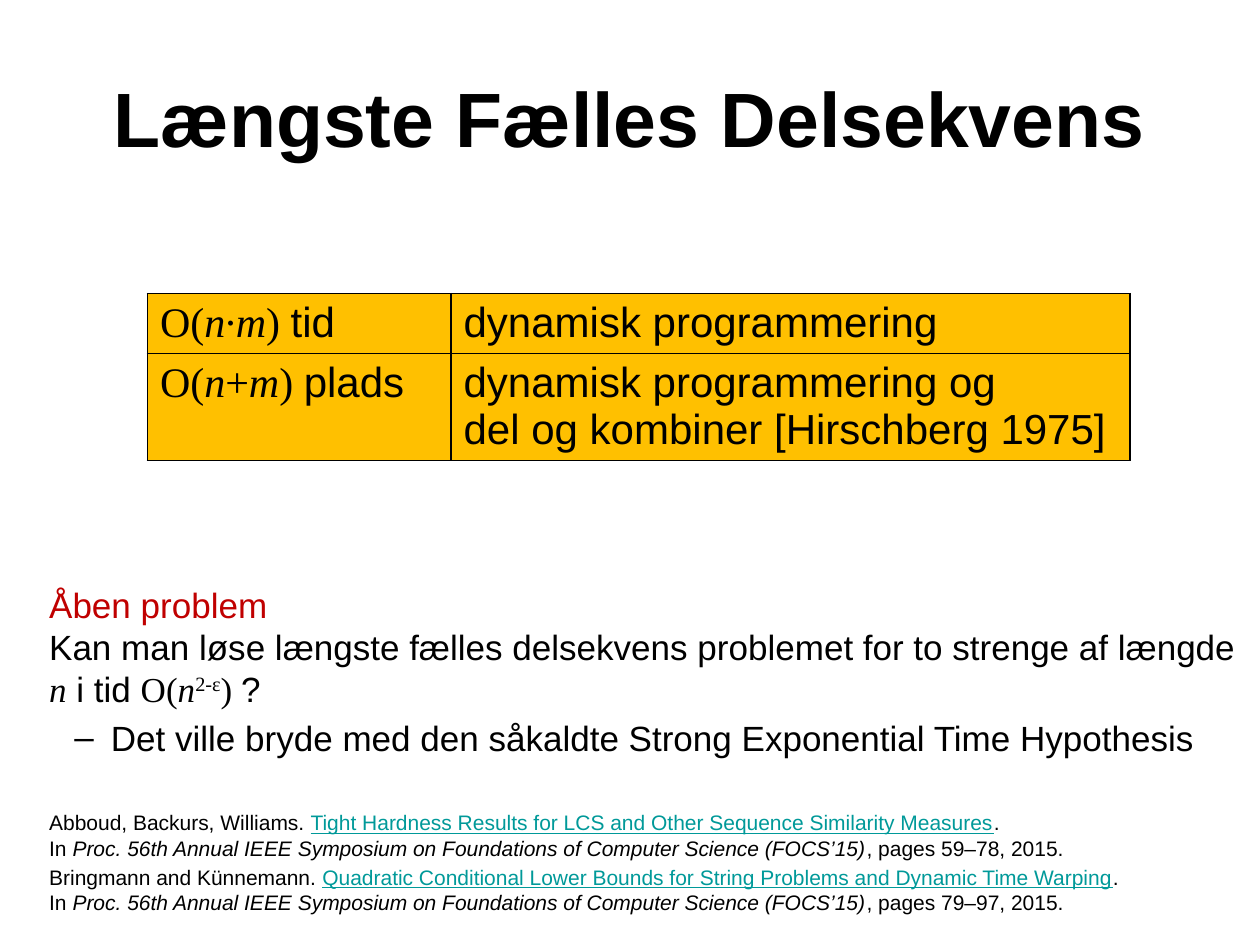
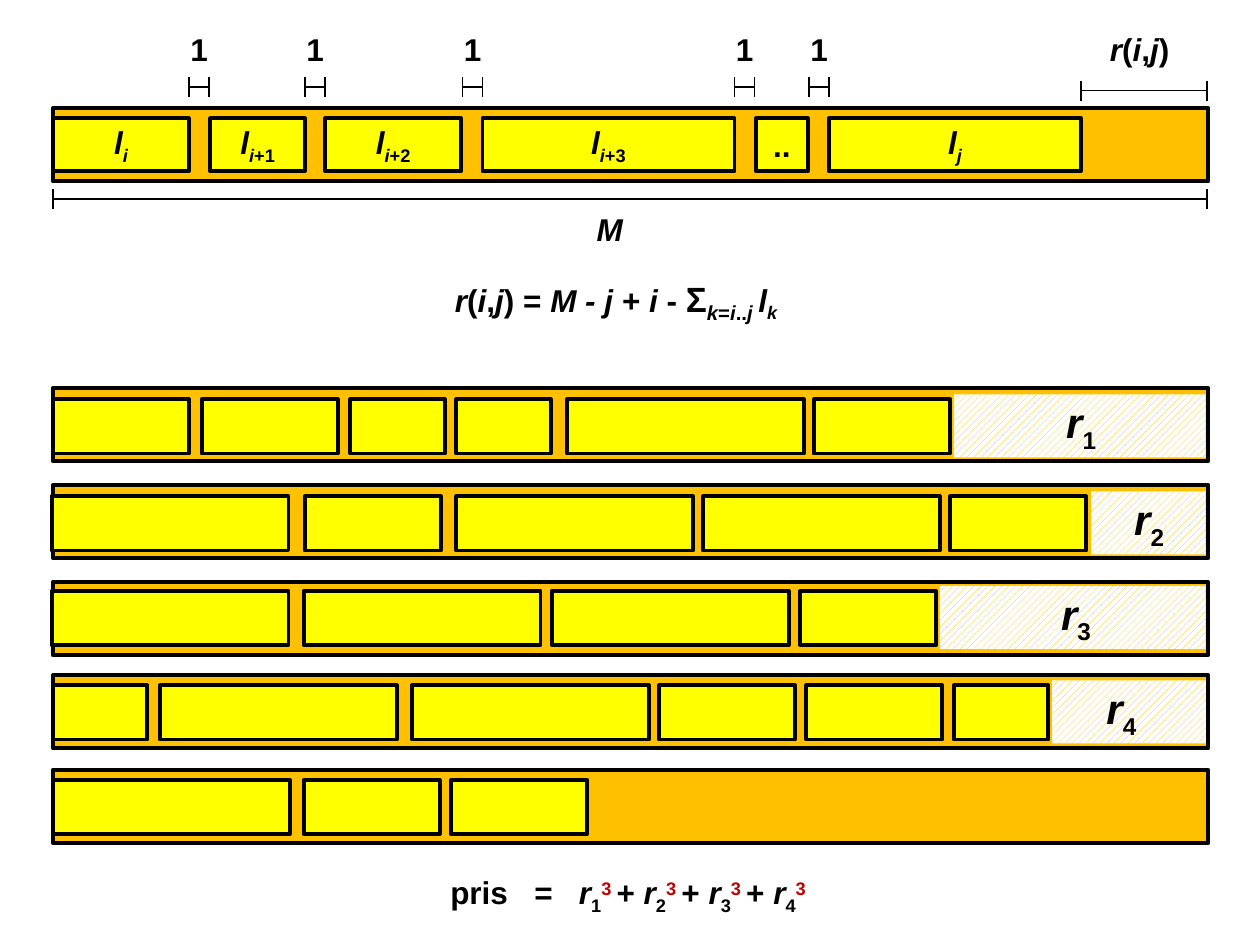
from dataclasses import dataclass
from typing import NamedTuple, Optional

from lxml import etree
from pptx import Presentation
from pptx.dml.color import RGBColor
from pptx.enum.dml import MSO_PATTERN
from pptx.enum.shapes import MSO_CONNECTOR, MSO_SHAPE
from pptx.enum.text import MSO_ANCHOR, MSO_AUTO_SIZE, PP_ALIGN
from pptx.oxml.ns import qn
from pptx.util import Inches, Pt

RECTANGLE = MSO_SHAPE.RECTANGLE
STRAIGHT = MSO_CONNECTOR.STRAIGHT
LEFT, CENTER = PP_ALIGN.LEFT, PP_ALIGN.CENTER
DIAGONAL = MSO_PATTERN.WIDE_UPWARD_DIAGONAL
SUB, SUP = -25, 30


@dataclass(frozen=True)
class Theme:
    black: RGBColor = RGBColor(0x00, 0x00, 0x00)
    white: RGBColor = RGBColor(0xFF, 0xFF, 0xFF)
    red: RGBColor = RGBColor(0xC0, 0x00, 0x00)
    orange: RGBColor = RGBColor(0xFF, 0xC0, 0x00)
    yellow: RGBColor = RGBColor(0xFF, 0xFF, 0x00)
    link: RGBColor = RGBColor(0x00, 0x99, 0x99)
    sans: str = "Arial"
    serif: str = "Times New Roman"
    title: int = 44
    large: int = 24
    body: int = 20
    label: int = 18
    reference: int = 12
    outline: float = 2.25
    hairline: float = 0.75


THEME = Theme()


class Span(NamedTuple):
    """A stretch of text; unset fields follow the paragraph."""
    text: str
    italic: Optional[bool] = None
    base: int = 0
    color: Optional[RGBColor] = None
    font: Optional[str] = None
    size: Optional[int] = None
    underline: Optional[bool] = None
    tracking: int = 0


class Dimension(NamedTuple):
    left: float
    right: float
    middle: float


class Block(NamedTuple):
    left: float
    width: float
    spans: tuple = ()


class TextLine(NamedTuple):
    """One line of words as laid out by a text box."""
    top: float
    left: float
    width: float
    bottom: float
    blocks: tuple
    waste_left: Optional[float] = None
    label_left: float = 0


def var(text: str, base: int = 0, size: Optional[int] = None) -> Span:
    return Span(text, italic=True, base=base, size=size)


def serif(text: str, italic: bool = False, base: int = 0) -> Span:
    return Span(text, italic, base, font=THEME.serif)


def write(paragraph, spans, size: int, bold: bool = False, align=LEFT) -> None:
    paragraph.alignment = align
    font = paragraph.font
    font.name, font.size, font.bold = THEME.sans, Pt(size), bold
    font.color.rgb = THEME.black
    for span in spans:
        for index, text in enumerate(span.text.split("\n")):
            if index:
                paragraph.add_line_break()
            if text:
                add_run(paragraph, text, span)


def add_run(paragraph, text: str, span: Span) -> None:
    run = paragraph.add_run()
    run.text = text
    run.font.italic = span.italic
    run.font.underline = span.underline
    if span.font:
        run.font.name = span.font
    if span.size:
        run.font.size = Pt(span.size)
    if span.color is not None:
        run.font.color.rgb = span.color
    properties = run._r.get_or_add_rPr()
    if span.base:
        properties.set("baseline", str(span.base * 1000))
    if span.tracking:
        properties.set("spc", str(span.tracking * 100))


def place(shape, left: float, top: float, width: float, height: float) -> None:
    shape.left, shape.top = Inches(left), Inches(top)
    shape.width, shape.height = Inches(width), Inches(height)


def add_box(slide, left: float, top: float, width: float, height: float,
            color: RGBColor, spans=()):
    box = slide.shapes.add_shape(RECTANGLE, Inches(left), Inches(top),
                                 Inches(width), Inches(height))
    box.shadow.inherit = False
    box.fill.solid()
    box.fill.fore_color.rgb = color
    box.line.color.rgb = THEME.black
    box.line.width = Pt(THEME.outline)
    if spans:
        write(box.text_frame.paragraphs[0], spans, THEME.label, True, CENTER)
    return box


def add_label(slide, left: float, top: float, width: float, spans,
              size: int = THEME.label, height: float = 0.4,
              align=CENTER, wrap: bool = True) -> None:
    label = slide.shapes.add_textbox(Inches(left), Inches(top),
                                     Inches(width), Inches(height))
    label.text_frame.word_wrap = wrap
    label.text_frame.auto_size = MSO_AUTO_SIZE.SHAPE_TO_FIT_TEXT
    write(label.text_frame.paragraphs[0], spans, size, True, align)


def add_line(slide, x1: float, y1: float, x2: float, y2: float) -> None:
    line = slide.shapes.add_connector(STRAIGHT, Inches(x1), Inches(y1),
                                      Inches(x2), Inches(y2))
    line.line.color.rgb = THEME.black
    line.line.width = Pt(THEME.hairline)
    etree.SubElement(line._element.spPr, qn("a:effectLst"))


def add_dimension(slide, dimension: Dimension) -> None:
    """Draw a measuring line with a tick at each end."""
    left, right, middle = dimension
    for x in (left, right):
        add_line(slide, x, middle - 0.08, x, middle + 0.08)
    add_line(slide, left, middle, right, middle)


def set_indent(paragraph, margin: float, hanging: float, bullet: bool) -> None:
    properties = paragraph._p.get_or_add_pPr()
    properties.set("marL", str(Inches(margin)))
    properties.set("indent", str(-Inches(hanging)))
    if not bullet:
        properties.insert_element_before(
            etree.Element(qn("a:buNone")), "a:tabLst", "a:defRPr", "a:extLst")


def border_cell(cell) -> None:
    properties = cell._tc.get_or_add_tcPr()
    for index, side in enumerate(("lnL", "lnR", "lnT", "lnB")):
        edge = etree.Element(qn(f"a:{side}"), w=str(Pt(1)))
        fill = etree.SubElement(edge, qn("a:solidFill"))
        etree.SubElement(fill, qn("a:srgbClr"), val=str(THEME.black))
        properties.insert(index, edge)


def reference(authors: str, title: str, pages: str) -> tuple:
    venue = ("Proc. 56th Annual IEEE Symposium on Foundations of "
             "Computer Science (FOCS’15)")
    return (Span(authors + " "), Span(title, color=THEME.link, underline=True),
            Span(". \nIn "), var(venue), Span(f", pages {pages}, 2015."))


def add_complexity_table(slide) -> None:
    def bound(operator: str, resource: str) -> tuple:
        return (serif("O("), serif("n", True), serif(operator),
                serif("m", True), serif(") "), Span(resource))

    rows = (
        (bound("∙", "tid"), (Span("dynamisk programmering"),)),
        (bound("+", "plads"), (Span("dynamisk programmering og \n"
                                    "del og kombiner [Hirschberg 1975]"),)),
    )
    table = slide.shapes.add_table(2, 2, Inches(1.17), Inches(2.33),
                                   Inches(7.8), Inches(1.32)).table
    for column, width in zip(table.columns, (2.41, 5.39)):
        column.width = Inches(width)
    for row, height in zip(table.rows, (0.47, 0.85)):
        row.height = Inches(height)
    for r, row_spans in enumerate(rows):
        for c, spans in enumerate(row_spans):
            cell = table.cell(r, c)
            cell.fill.solid()
            cell.fill.fore_color.rgb = THEME.orange
            border_cell(cell)
            write(cell.text_frame.paragraphs[0], spans, THEME.large)


def build_subsequence_slide(prs) -> None:
    slide = prs.slides.add_slide(prs.slide_layouts[1])
    title, body = slide.shapes.title, slide.placeholders[1]
    place(title, 0.5, 0.3, 9, 1.25)
    title.text_frame.vertical_anchor = MSO_ANCHOR.MIDDLE
    write(title.text_frame.paragraphs[0],
          (Span("Længste Fælles Delsekvens"),), THEME.title, True, CENTER)

    place(body, 0.29, 4.58, 9.67, 2.92)
    frame = body.text_frame
    frame.auto_size = MSO_AUTO_SIZE.NONE
    problem = (
        Span("Åben problem\n", color=THEME.red),
        Span("Kan man løse længste fælles delsekvens problemet "
             "for to strenge af længde "),
        serif("n", True), Span(" i tid "), serif("O("), serif("n", True),
        serif("2-ε", base=SUP), serif(") "), Span("?"))
    consequence = (Span("Det ville bryde med den såkaldte "
                        "Strong Exponential Time Hypothesis"),)
    abboud = reference("Abboud, Backurs, Williams.",
                       "Tight Hardness Results for LCS and Other Sequence "
                       "Similarity Measures", "59–78")
    bringmann = reference("Bringmann and Künnemann.",
                          "Quadratic Conditional Lower Bounds for String "
                          "Problems and Dynamic Time Warping", "79–97")
    items = ((problem, 0, THEME.body, 4), (consequence, 1, THEME.body, 4),
             (abboud, 0, THEME.reference, 29.4),
             (bringmann, 0, THEME.reference, 2.4))
    for index, (spans, level, size, gap) in enumerate(items):
        paragraph = frame.add_paragraph() if index else frame.paragraphs[0]
        paragraph.level = level
        paragraph.space_before = Pt(gap)
        write(paragraph, spans, size)
        set_indent(paragraph, 0.49 * level, 0.29 * level, bool(level))
    add_complexity_table(slide)


BAR_LEFT, BAR_WIDTH, BAR_HEIGHT = 0.42, 9.17, 0.58
BAR_RIGHT = 9.58
SHORT, MEDIUM, LONG = 0.75, 1.08, 1.88


def add_bar(slide, top: float, block_top: float, blocks, block_height: float) -> None:
    add_box(slide, BAR_LEFT, top, BAR_WIDTH, BAR_HEIGHT, THEME.orange)
    for block in blocks:
        add_box(slide, block.left, block_top, block.width, block_height,
                THEME.yellow, block.spans)


def add_waste(slide, number: int, left: float, top: float, label_left: float) -> None:
    """Hatch the unused end of a line and name it r with its number."""
    waste = add_box(slide, left, top, 9.57 - left, 0.5, THEME.white)
    waste.fill.patterned()
    waste.fill.pattern = DIAGONAL
    waste.fill.fore_color.rgb = THEME.orange
    waste.fill.back_color.rgb = THEME.white
    waste.line.fill.background()
    add_label(slide, label_left, top - 0.03, 0.58,
              (var("r"), Span(str(number), base=SUB)), THEME.large, 0.5)


def add_definition(slide) -> None:
    def word(index: str, offset: str = "") -> tuple:
        return var("l"), var(index, SUB), Span(offset, base=SUB)

    words = (Block(0.42, 1.08, word("i")), Block(1.67, 0.75, word("i", "+1")),
             Block(2.58, 1.08, word("i", "+2")), Block(3.83, 2, word("i", "+3")),
             Block(6, 0.41, (Span(".."),)), Block(6.58, 2, word("j")))
    add_bar(slide, 0.86, 0.94, words, 0.42)

    for left in (1.5, 2.42, 3.67, 5.83, 6.42):
        add_dimension(slide, Dimension(left, left + 0.16, 0.69))
        add_label(slide, left + 0.08 - 0.71, 0.19, 1.42, (Span("1"),))
    add_dimension(slide, Dimension(8.58, BAR_RIGHT, 0.72))
    add_dimension(slide, Dimension(BAR_LEFT, BAR_RIGHT, 1.58))

    rest = (var("r"), Span("("), var("i"), Span(","), var("j"), Span(")"))
    add_label(slide, 8.71, 0.19, 0.75, rest, align=LEFT, wrap=False)
    add_label(slide, 4.13, 1.62, 1.42, (var("M"),))
    size = THEME.body
    formula = rest + (
        Span(" = "), var("M - j "), Span("+ "), var("i"), Span(" - "),
        Span("Σ", size=size), var("k", SUB, size),
        Span("=", base=SUB, size=size), var("i", SUB, size),
        Span("..", base=SUB, size=size), var("j ", SUB, size),
        var("l"), var("k ", SUB))
    add_label(slide, 3.4, 2.15, 3.02, formula, height=0.44, wrap=False)


class Line(NamedTuple):
    top: float
    block_top: float
    blocks: tuple
    waste_left: Optional[float] = None
    label_left: float = 0


LINES = (
    Line(3.08, 3.17, (Block(0.42, MEDIUM), Block(1.6, MEDIUM), Block(2.78, SHORT),
                      Block(3.62, SHORT), Block(4.5, LONG), Block(6.46, MEDIUM)),
         7.57, 8.29),
    Line(3.85, 3.94, (Block(0.41, LONG), Block(2.42, MEDIUM), Block(3.62, LONG),
                      Block(5.58, LONG), Block(7.54, MEDIUM)), 8.66, 8.83),
    Line(4.62, 4.69, (Block(0.41, LONG), Block(2.41, LONG), Block(4.38, LONG),
                      Block(6.35, MEDIUM)), 7.46, 8.25),
    Line(5.36, 5.44, (Block(0.42, SHORT), Block(1.27, LONG), Block(3.27, LONG),
                      Block(5.23, MEDIUM), Block(6.4, MEDIUM), Block(7.57, SHORT)),
         8.35, 8.61),
    Line(6.11, 6.19, (Block(0.42, LONG), Block(2.41, MEDIUM), Block(3.58, MEDIUM))),
)


def build_line_breaking_slide(prs) -> None:
    slide = prs.slides.add_slide(prs.slide_layouts[6])
    add_definition(slide)
    price = [Span("pris"), Span(" ", tracking=10), Span("="), Span(" ", tracking=10)]
    for number, line in enumerate(LINES, start=1):
        add_bar(slide, line.top, line.block_top, line.blocks, 0.43)
        if line.waste_left is None:
            continue
        add_waste(slide, number, line.waste_left, line.block_top - 0.04, line.label_left)
        if number > 1:
            price.append(Span("+ "))
        price += [var("r"), Span(str(number), base=SUB),
                  Span("3 ", base=SUP, color=THEME.red)]
    add_label(slide, 1.94, 6.88, 6.13, price)


def main() -> None:
    prs = Presentation()
    prs.slide_width, prs.slide_height = Inches(10), Inches(7.5)
    build_subsequence_slide(prs)
    build_line_breaking_slide(prs)
    prs.save("out.pptx")


if __name__ == "__main__":
    main()
